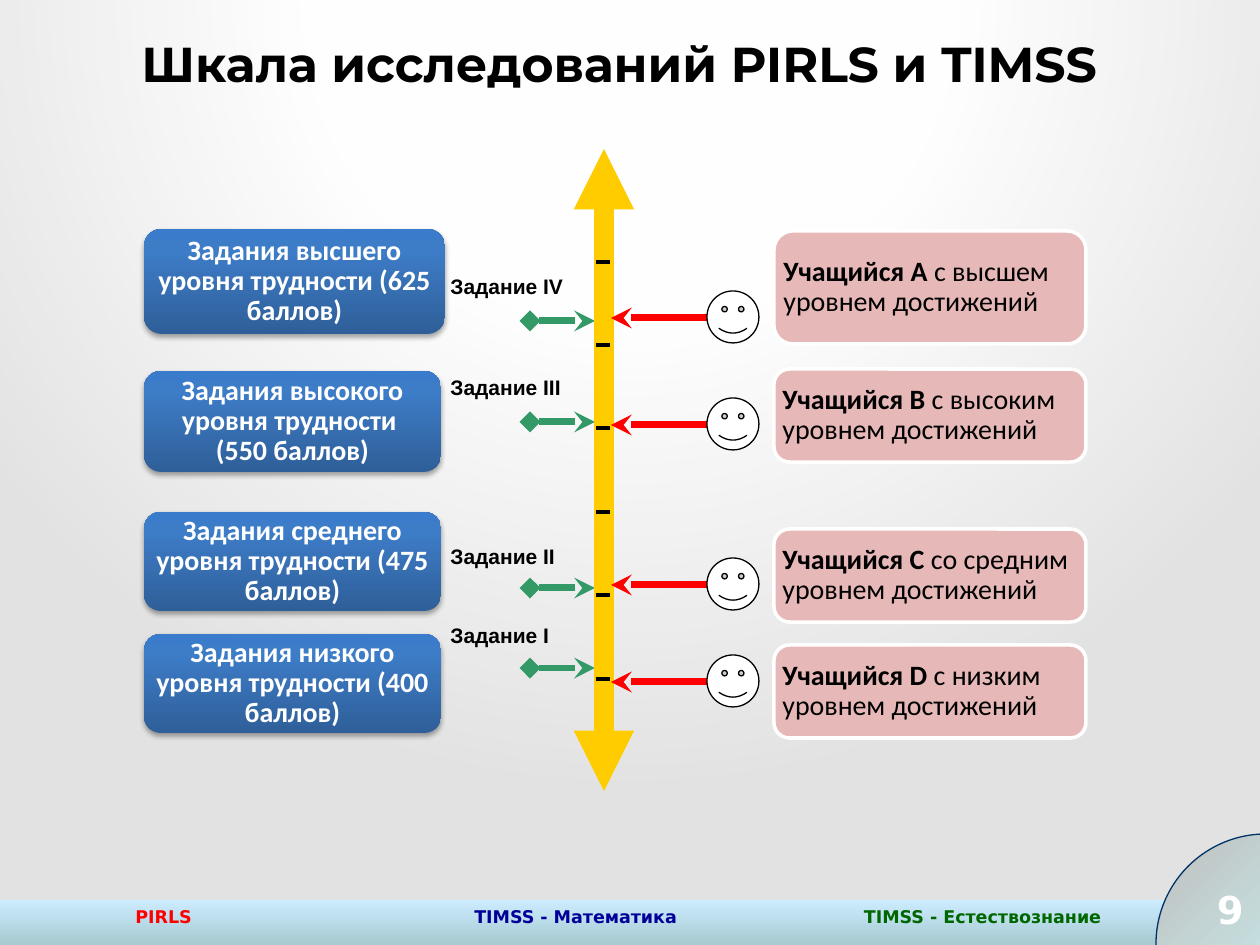
from dataclasses import dataclass

from pptx import Presentation
from pptx import util as u
from pptx.dml.color import RGBColor
from pptx.enum import shapes, text
from pptx.oxml import parse_xml
from pptx.oxml.ns import nsdecls, qn

EMU_PER_PX = 914400 / 126
SHAPE = shapes.MSO_SHAPE
ALIGN = text.PP_ALIGN
MIDDLE = text.MSO_ANCHOR.MIDDLE


@dataclass(frozen=True)
class Theme:
    black: str = "000000"
    white: str = "FFFFFF"
    axis: str = "FFCC00"
    task: str = "339966"
    pupil: str = "FF0000"
    pupil_card: str = "E6B9B8"
    corner_line: str = "003366"
    pirls: str = "FF0000"
    maths: str = "000099"
    science: str = "006600"
    backdrop: tuple = ((0, "FFFFFF"), (40, "FEFEFE"), (100, "7F7F7F"))
    footer: tuple = ((0, "CCECFF"), (100, "92B6B6"))
    corner: tuple = ((0, "BFBFBF"), (100, "CCFFFF"))
    task_card: tuple = ((0, "2F5F99"), (80, "3D7CC7"), (100, "3A7CCB"))
    title_font: str = "Montserrat"
    card_font: str = "Calibri"
    label_font: str = "Arial"
    footer_font: str = "DejaVu Sans"
    title_size: int = 28
    number_size: int = 22
    card_size: int = 16
    label_size: int = 12
    footer_size: int = 10


THEME = Theme()

# top, width, height, text
TASK_CARDS = [
    (229, 301, 105, "Задания высшего уровня трудности (625 баллов)"),
    (371, 297, 101, "Задания высокого уровня трудности \n(550 баллов)"),
    (512, 297, 99, "Задания среднего уровня трудности (475 баллов)"),
    (634, 297, 99, "Задания низкого уровня трудности (400 баллов)"),
]
# top, height, arrow y, name, level
PUPILS = [
    (231, 113, 318, "Учащийся А", " с высшем уровнем достижений"),
    (369, 93, 425, "Учащийся B", " с высоким уровнем достижений"),
    (529, 93, 585, "Учащийся С", " со средним уровнем достижений"),
    (645, 93, 682, "Учащийся D", " с низким уровнем достижений"),
]
# label top, arrow y, label
TASKS = [
    (267, 321, "Задание IV"),
    (368, 422, "Задание III"),
    (537, 588, "Задание II"),
    (616, 668, "Задание I"),
]
# left, width, text, colour, alignment
FOOTER_LABELS = [
    (123, 100, "PIRLS", THEME.pirls, ALIGN.LEFT),
    (382, 387, "TIMSS - Математика", THEME.maths, ALIGN.CENTER),
    (789, 387, "TIMSS - Естествознание", THEME.science, ALIGN.CENTER),
]
TICKS, TICK_TOP, TICK_SPAN = 6, 262, 417


def px(*lengths):
    return [u.Emu(round(length * EMU_PER_PX)) for length in lengths]


def rgb(colour):
    return RGBColor.from_string(colour)


def set_gradient(fill, owner, stops, angle=None):
    """Fill linearly at a clockwise angle, or radially from the top if none is given."""
    fill.gradient()
    grad = owner.find(".//" + qn("a:gradFill"))
    stop_list = grad.find(qn("a:gsLst"))
    for stop in list(stop_list):
        stop_list.remove(stop)
    for position, colour in stops:
        stop_list.append(parse_xml(
            f'<a:gs {nsdecls("a")} pos="{position * 1000}"><a:srgbClr val="{colour}"/></a:gs>'))
    linear = grad.find(qn("a:lin"))
    if angle is None:
        grad.replace(linear, parse_xml(
            f'<a:path {nsdecls("a")} path="circle">'
            '<a:fillToRect l="50000" t="-80000" r="50000" b="180000"/></a:path>'))
    else:
        linear.set("ang", str(angle * 60000))


def write(frame, spans, font, size, colour, align=ALIGN.LEFT, spacing=None, **frame_format):
    """Write one paragraph from (text, bold) spans."""
    frame.word_wrap = True
    for name, value in frame_format.items():
        setattr(frame, name, value)
    para = frame.paragraphs[0]
    para.alignment = align
    para.line_spacing = spacing
    for words, bold in spans:
        for index, line in enumerate(words.split("\n")):
            if index:
                para.add_line_break()
            span = para.add_run()
            span.text = line
            for name, value in dict(name=font, size=u.Pt(size), bold=bold).items():
                setattr(span.font, name, value)
            span.font.color.rgb = rgb(colour)


def add_label(page, place, words, *style, **paragraph_format):
    box = page.shapes.add_textbox(*px(*place))
    write(box.text_frame, [(words, True)], *style, **paragraph_format)


def add_figure(page, kind, place, fill, angle=0, line=None, width=0.75):
    """Add a preset shape; a tuple of stops as fill gives a gradient."""
    figure = page.shapes.add_shape(kind, *px(*place))
    figure.shadow.inherit = False
    if isinstance(fill, tuple):
        set_gradient(figure.fill, figure._element.spPr, fill, angle)
    else:
        figure.fill.solid()
        figure.fill.fore_color.rgb = rgb(fill)
    if line:
        figure.line.color.rgb = rgb(line)
        figure.line.width = u.Pt(width)
    else:
        figure.line.fill.background()
    return figure


def add_line(page, start, end, colour, width, head=None, tail=None):
    line = page.shapes.add_connector(shapes.MSO_CONNECTOR.STRAIGHT, *px(*start, *end))
    line.line.color.rgb = rgb(colour)
    line.line.width = u.Pt(width)
    for tag, kind in (("headEnd", head), ("tailEnd", tail)):
        if kind:
            line.line._ln.append(parse_xml(f'<a:{tag} {nsdecls("a")} type="{kind}"/>'))
    line._element.spPr.append(parse_xml(f'<a:effectLst {nsdecls("a")}/>'))


def write_card(card, spans, colour, align):
    inset = px(4)[0]
    margins = {f"margin_{side}": inset for side in ("left", "right", "top", "bottom")}
    write(card.text_frame, spans, THEME.card_font, THEME.card_size, colour, align, 0.9,
          vertical_anchor=MIDDLE, **margins)


def add_task_card(page, top, width, height, words):
    card = add_figure(page, SHAPE.ROUNDED_RECTANGLE, (144, top, width, height),
                      THEME.task_card, angle=270)
    card._element.spPr.find(qn("a:effectLst")).append(parse_xml(
        f'<a:outerShdw {nsdecls("a")} blurRad="{u.Pt(3.1)}" dist="{u.Pt(1.8)}" dir="5400000" '
        f'rotWithShape="0"><a:srgbClr val="{THEME.black}"><a:alpha val="35000"/></a:srgbClr>'
        '</a:outerShdw>'))
    write_card(card, [(words, True)], THEME.white, ALIGN.CENTER)


def add_pupil(page, top, height, y, name, level):
    card = add_figure(page, SHAPE.ROUNDED_RECTANGLE, (774, top, 312, height),
                      THEME.pupil_card, line=THEME.white, width=2)
    write_card(card, [(name, True), (level, False)], THEME.black, ALIGN.LEFT)
    add_line(page, (708, y), (611, y), THEME.pupil, 4, tail="stealth")
    add_figure(page, SHAPE.SMILEY_FACE, (707, y - 27, 52, 52), THEME.white, line=THEME.black)


def add_task(page, top, y, words):
    add_label(page, (438, top, 141, 52), words, THEME.label_font, THEME.label_size, THEME.black)
    add_line(page, (595, y), (530, y), THEME.task, 4, head="stealth", tail="diamond")


def add_axis(page):
    add_line(page, (604, 149), (604, 791), THEME.axis, 11.5, head="triangle", tail="triangle")
    for index in range(TICKS):
        y = TICK_TOP + TICK_SPAN * index // (TICKS - 1)
        add_line(page, (596, y), (610, y), THEME.black, 2)


def add_frame(page):
    """Add the background, the footer bar and the numbered corner."""
    set_gradient(page.background.fill, page._element, THEME.backdrop)
    add_figure(page, SHAPE.RECTANGLE, (0, 900, 1255, 69), THEME.footer, angle=90)
    for left, width, words, colour, align in FOOTER_LABELS:
        add_label(page, (left, 900, width, 43), words,
                  THEME.footer_font, THEME.footer_size, colour, align)
    veil = add_figure(page, SHAPE.RECTANGLE, (0, 0, 1260, 900), THEME.white)
    veil._element.spPr.find(".//" + qn("a:srgbClr")).append(
        parse_xml(f'<a:alpha {nsdecls("a")} val="78000"/>'))
    add_figure(page, SHAPE.OVAL, (1156, 834, 220, 220), THEME.corner, 45, THEME.corner_line)
    add_label(page, (1156, 880, 100, 59), "9",
              THEME.footer_font, THEME.number_size, THEME.white, ALIGN.RIGHT)


def add_title(page, words):
    title = page.shapes.title
    title.left, title.top, title.width, title.height = px(42, 37, 1154, 63)
    write(title.text_frame, [(words, True)], THEME.title_font, THEME.title_size, THEME.black,
          ALIGN.CENTER, 0.8, vertical_anchor=MIDDLE, auto_size=text.MSO_AUTO_SIZE.NONE)
    page.shapes._spTree.append(title._element)  # in front of the veil


def main():
    deck = Presentation()
    deck.slide_width, deck.slide_height = px(1260, 945)
    page = deck.slides.add_slide(deck.slide_layouts[5])
    add_frame(page)
    add_title(page, "Шкала исследований PIRLS и TIMSS")
    for card in TASK_CARDS:
        add_task_card(page, *card)
    for task in TASKS:
        add_task(page, *task)
    add_axis(page)
    for pupil in PUPILS:
        add_pupil(page, *pupil)
    deck.save("out.pptx")


if __name__ == "__main__":
    main()
